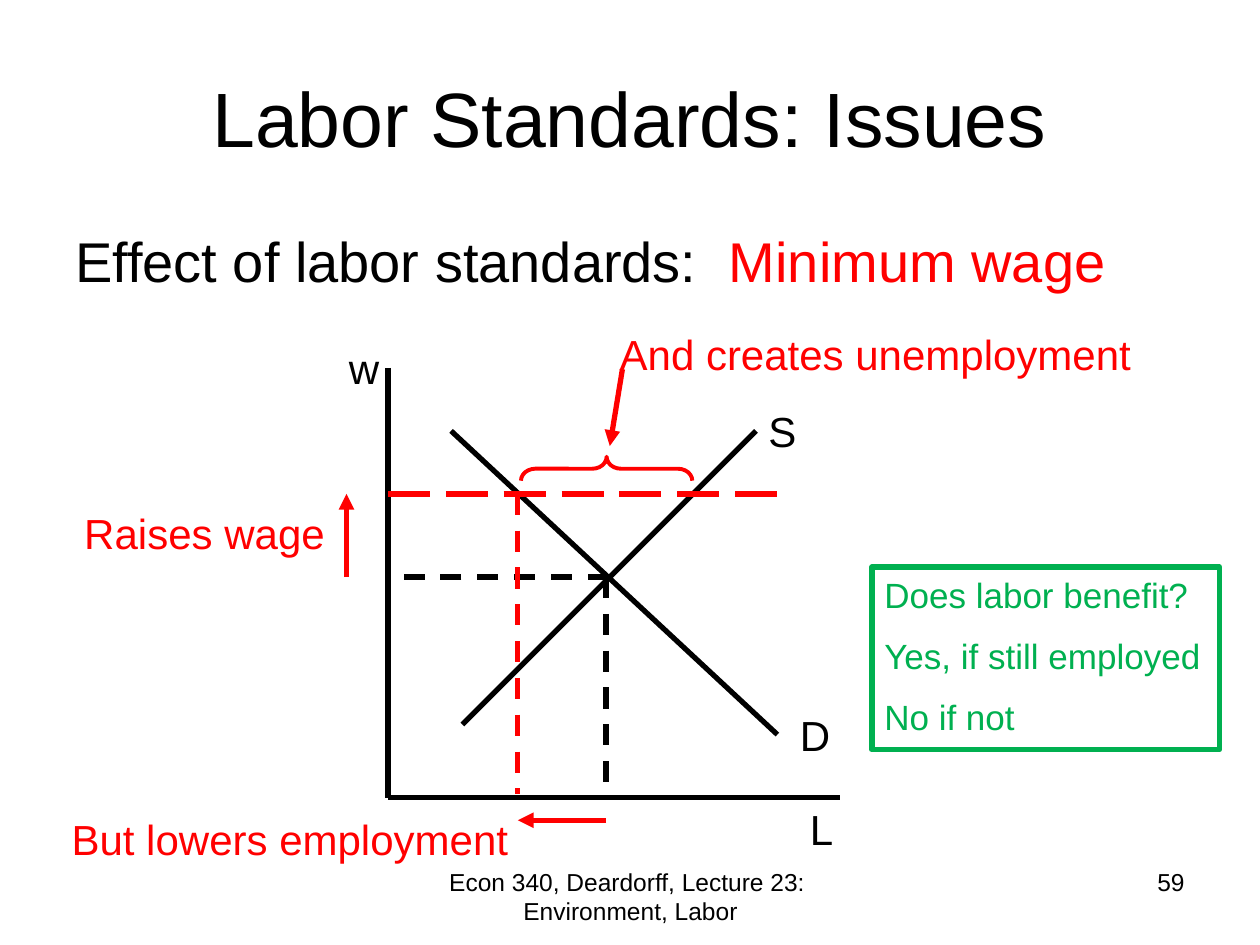
from lxml.etree import SubElement
from pptx import Presentation
from pptx.dml.color import RGBColor
from pptx.enum.dml import MSO_LINE
from pptx.enum.shapes import MSO_CONNECTOR, MSO_SHAPE
from pptx.enum.text import MSO_ANCHOR, PP_ALIGN
from pptx.oxml.ns import qn
from pptx.util import Inches, Pt

BLACK = RGBColor(0x00, 0x00, 0x00)
RED = RGBColor(0xFF, 0x00, 0x00)
GREEN = RGBColor(0x00, 0xB0, 0x50)
FONT = "Arial"
WIDTH, HEIGHT = 10, 7.5
MARGIN = WIDTH * 0.05

# Content: each paragraph is a list of (text, colour) spans
TITLE = [[("Labor Standards: Issues", BLACK)]]
BODY = [[("Effect of labor standards:  ", BLACK), ("Minimum wage", RED)]]
FOOTER = [[("Econ 340, Deardorff, Lecture 23:  Environment, Labor", BLACK)]]
NUMBER = [[("59", BLACK)]]
ANSWERS = [[(line, GREEN)] for line in
           ("Does labor benefit?", "Yes, if still employed", "No if not")]

# Diagram landmarks, in inches
AXIS_X, AXIS_Y = 3.08, 6.33
AXIS_TOP, AXIS_RIGHT = 2.92, 6.67
CURVE_TOP, CURVE_RIGHT = 3.42, 6.17
MARKET_WAGE, MINIMUM_WAGE = 4.58, 3.92
MARKET_LABOR, MINIMUM_LABOR = 4.81, 4.11
WAGE_ARROW_X, LABOR_ARROW_Y = 2.75, 6.51

# start, end, colour, dash, arrow
AXES_AND_CURVES = [
    ((AXIS_X, AXIS_TOP), (AXIS_X, AXIS_Y), BLACK, None, False),
    ((AXIS_X, AXIS_Y), (AXIS_RIGHT, AXIS_Y), BLACK, None, False),
    ((3.67, 5.75), (6, CURVE_TOP), BLACK, None, False),
    ((3.58, CURVE_TOP), (CURVE_RIGHT, 5.83), BLACK, None, False),
]
WAGE_LEVELS = [
    ((4.83, MARKET_WAGE), (AXIS_X, MARKET_WAGE), BLACK, MSO_LINE.DASH, False),
    ((AXIS_X, MINIMUM_WAGE), (CURVE_RIGHT, MINIMUM_WAGE), RED,
     MSO_LINE.LONG_DASH, False),
]
EMPLOYMENT_LEVELS = [
    ((MARKET_LABOR, MARKET_WAGE), (MARKET_LABOR, AXIS_Y), BLACK,
     MSO_LINE.DASH, False),
    ((MINIMUM_LABOR, MINIMUM_WAGE), (MINIMUM_LABOR, 6.3), RED,
     MSO_LINE.DASH, False),
]
ARROWS = [
    ((WAGE_ARROW_X, MARKET_WAGE), (WAGE_ARROW_X, MINIMUM_WAGE), RED, None, True),
    ((MARKET_LABOR, LABOR_ARROW_Y), (MINIMUM_LABOR, LABOR_ARROW_Y), RED,
     None, True),
    ((4.94, 2.93), (4.84, 3.54), RED, None, True),
]

# text, left, top, width, colour, wrap
LABEL_HEIGHT = 0.5
LABELS = [
    ("D", 6.25, 5.58, 0.92, BLACK, True),
    ("S", 6, 3.17, 0.92, BLACK, True),
    ("L", 6.33, 6.33, 0.92, BLACK, True),
    ("w", 2.67, 2.67, 0.92, BLACK, True),
    ("Raises wage", 0.57, 3.98, 2.11, RED, False),
    ("But lowers employment", 0.47, 6.41, 3.67, RED, False),
    ("And creates unemployment", 4.82, 2.56, 4.26, RED, False),
]


def fill_text(shape, paragraphs, size, align=PP_ALIGN.LEFT,
              anchor=MSO_ANCHOR.TOP, wrap=True, gap=0):
    frame = shape.text_frame
    frame.word_wrap = wrap
    frame.vertical_anchor = anchor
    for index, spans in enumerate(paragraphs):
        para = frame.add_paragraph() if index else frame.paragraphs[0]
        para.alignment = align
        para.space_before = Pt(gap if index else 0)
        for text, colour in spans:
            span = para.add_run()
            span.text = text
            span.font.name = FONT
            span.font.size = Pt(size)
            span.font.color.rgb = colour


def add_text(page, place, paragraphs, size, **style):
    box = page.shapes.add_textbox(*map(Inches, place))
    fill_text(box, paragraphs, size, **style)


def add_outline(page, kind, place, colour, weight):
    shape = page.shapes.add_shape(kind, *map(Inches, place))
    shape.shadow.inherit = False
    shape.fill.background()
    shape.line.color.rgb = colour
    shape.line.width = Pt(weight)
    return shape


def add_lines(page, lines):
    for start, end, colour, dash, arrow in lines:
        line = page.shapes.add_connector(
            MSO_CONNECTOR.STRAIGHT, *map(Inches, start + end))
        line.line.color.rgb = colour
        line.line.width = Pt(3)
        if dash:
            line.line.dash_style = dash
        if arrow:
            SubElement(line.line._get_or_add_ln(), qn("a:tailEnd"), type="triangle")
        SubElement(line._element.spPr, qn("a:effectLst"))


def main():
    deck = Presentation()
    deck.slide_width, deck.slide_height = Inches(WIDTH), Inches(HEIGHT)
    page = deck.slides.add_slide(deck.slide_layouts[6])

    # Footer, title and body
    add_text(page, (3.42, 6.83, 3.17, 0.52), FOOTER, 14, align=PP_ALIGN.CENTER)
    add_text(page, (7.17, 6.83, 2.33, 0.52), NUMBER, 14, align=PP_ALIGN.RIGHT)
    content_width = WIDTH - 2 * MARGIN
    add_text(page, (MARGIN, 0.3, content_width, 1.25), TITLE, 44,
             align=PP_ALIGN.CENTER, anchor=MSO_ANCHOR.MIDDLE)
    add_text(page, (MARGIN, 1.75, content_width, 4.95), BODY, 32)

    # Supply and demand diagram
    add_lines(page, AXES_AND_CURVES + WAGE_LEVELS + EMPLOYMENT_LEVELS + ARROWS)
    for text, left, top, width, colour, wrap in LABELS:
        add_text(page, (left, top, width, LABEL_HEIGHT), [[(text, colour)]], 24,
                 wrap=wrap)

    # Brace over the unemployment gap
    brace = add_outline(page, MSO_SHAPE.RIGHT_BRACE, (4.72, 3.04, 0.19, 1.36),
                        RED, 2.25)
    brace.rotation = 270
    brace.adjustments[0] = 0.6
    brace.adjustments[1] = 0.5

    # Conclusion box
    answer_box = add_outline(page, MSO_SHAPE.RECTANGLE, (6.92, 4.5, 2.76, 1.45),
                             GREEN, 3)
    fill_text(answer_box, ANSWERS, 20, gap=11)

    deck.save("out.pptx")


if __name__ == "__main__":
    main()
